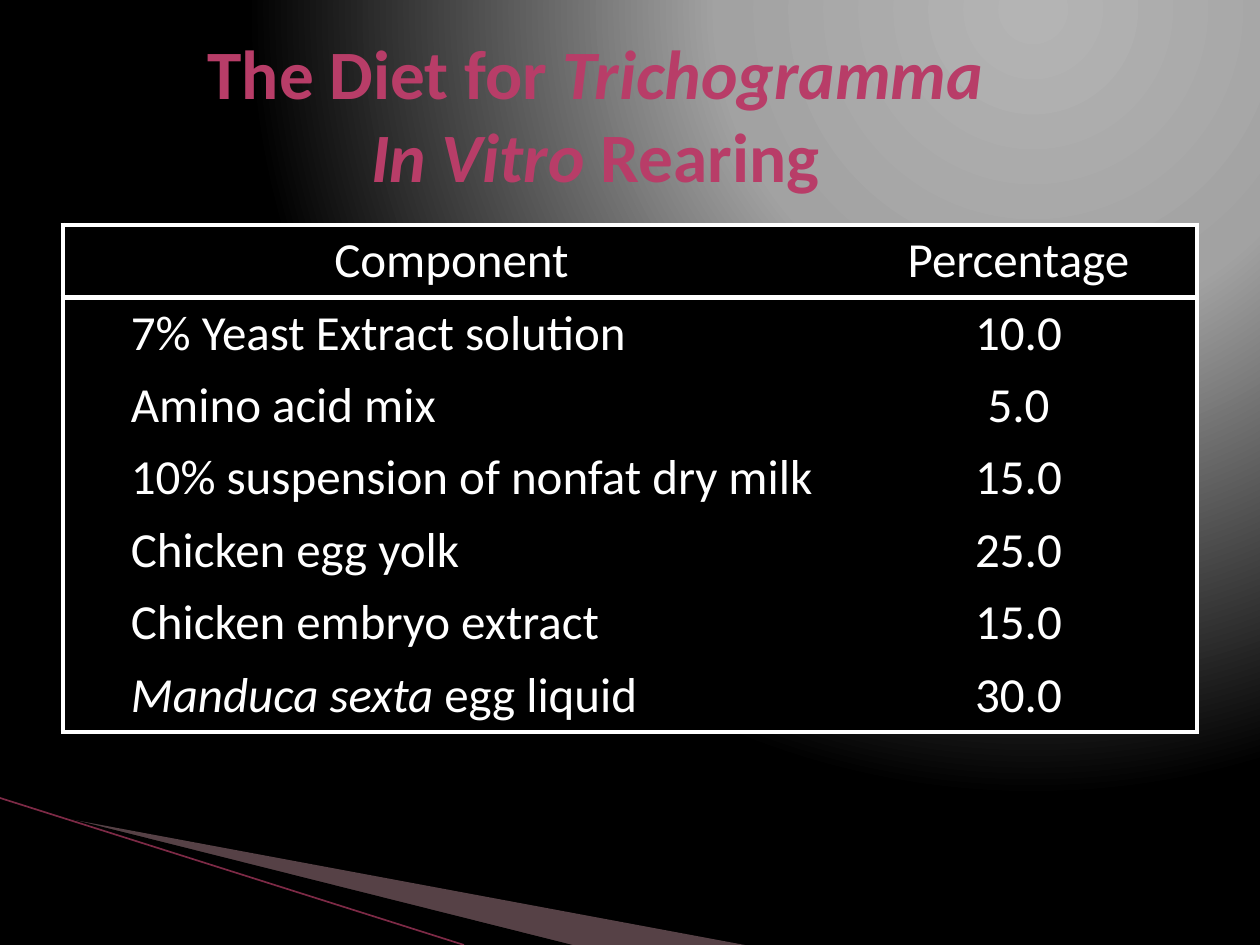
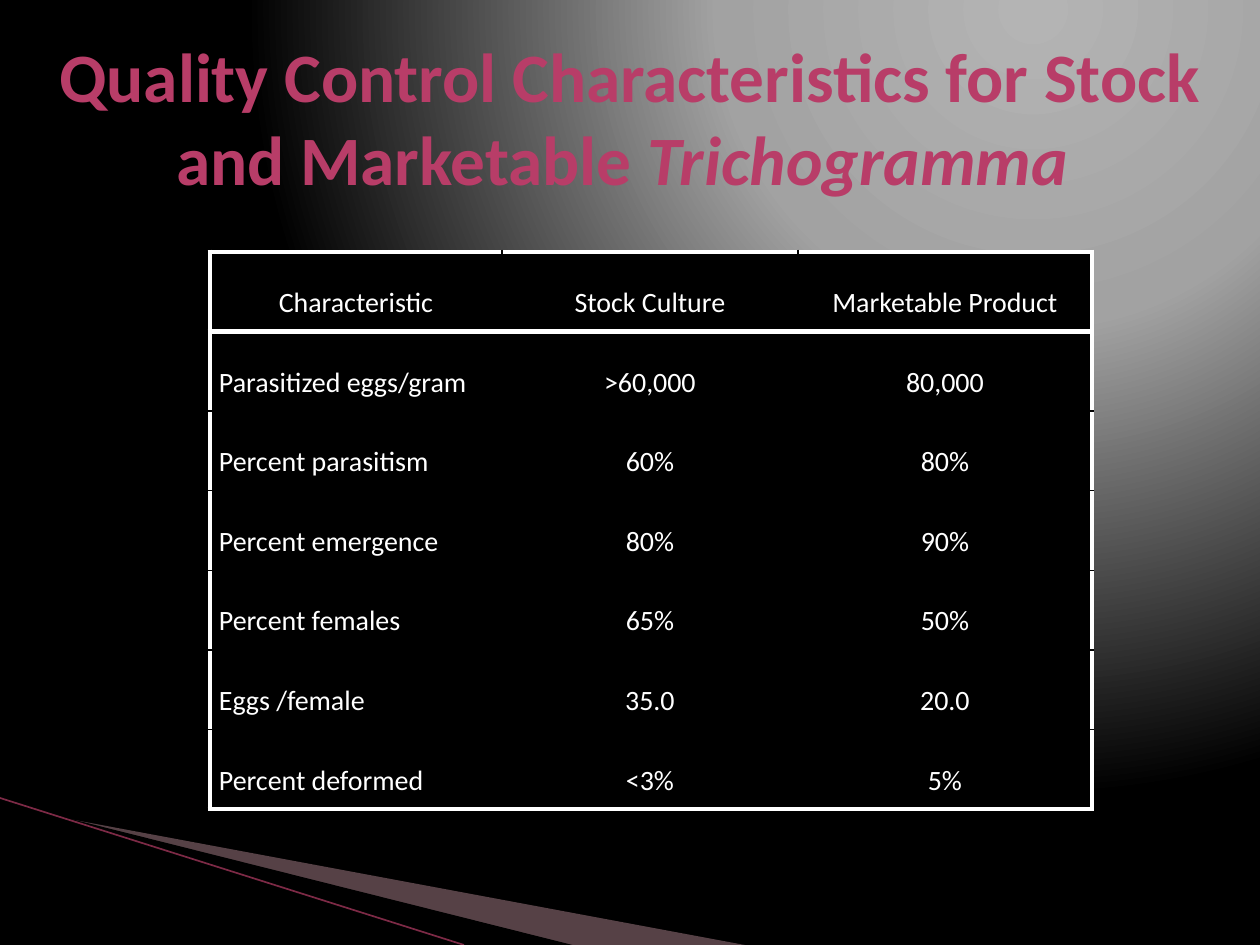
"""Build two slides on Trichogramma rearing: the diet and the quality control tables."""
from pptx import Presentation
from pptx.dml.color import RGBColor
from pptx.enum.shapes import MSO_CONNECTOR as Conn
from pptx.enum.text import MSO_ANCHOR as Anchor, PP_ALIGN as Align
from pptx.oxml import parse_xml
from pptx.oxml.ns import nsdecls, qn
from pptx.util import Pt

PX = 914400 // 126
W, H = 1260, 945
FONT = "Calibri"
WHITE = RGBColor(0xFF, 0xFF, 0xFF)
BLACK = RGBColor(0, 0, 0)
ROSE = RGBColor(0xB8, 0x3D, 0x68)
PALE_ROSE = RGBColor(0xD8, 0xA3, 0xAF)
DARK_ROSE = RGBColor(0x7D, 0x2A, 0x46)
GLOW = [(0, RGBColor(0xB4, 0xB4, 0xB4)), (40, RGBColor(0xA2, 0xA2, 0xA2)), (100, BLACK)]
WEDGES = [
    (PALE_ROSE, 40, [(69, 819), (750, 946), (575, 946)]),
    (BLACK, 100, [(67, 818), (576, 946), (469, 947), (68, 819)]),
]
RAY = (0, 798, 464, 945)
FRAME_PT = 3

SLIDES = [
    {
        "title": ["The Diet for *Trichogramma*", "*In Vitro* Rearing"],
        "title_box": (139, 30, 913, 157),
        "rows": [
            ("Component", "Percentage"),
            ("7% Yeast Extract solution", "10.0"),
            ("Amino acid mix", "5.0"),
            ("10% suspension of nonfat dry milk", "15.0"),
            ("Chicken egg yolk", "25.0"),
            ("Chicken embryo extract", "15.0"),
            ("*Manduca sexta* egg liquid", "30.0"),
        ],
        "at": (63, 225), "height": 507, "cols": (777, 357),
        "size": 28, "margins": (13, 6, 13, 6), "label_left": 68, "inner_pt": 0,
    },
    {
        "title": ["Quality Control Characteristics for Stock and Marketable *Trichogramma *"],
        "title_box": (21, 33, 1218, 157),
        "rows": [
            ("Characteristic", "Stock Culture", "Marketable Product"),
            ("Parasitized eggs/gram", ">60,000", "80,000"),
            ("Percent parasitism", "60%", "80%"),
            ("Percent emergence", "80%", "90%"),
            ("Percent females", "65%", "50%"),
            ("Eggs /female", "35.0", "20.0"),
            ("Percent deformed", "<3%", "5%"),
        ],
        "at": (210, 252), "height": 557, "cols": (292, 296, 294),
        "size": 16, "margins": (9, 34, 9, 0), "label_left": 9, "inner_pt": 1,
    },
]


def px(*values):
    return [v * PX for v in values]


def apply(obj, **values):
    for name, value in values.items():
        setattr(obj, name, value)


def write(p, text, align, color, **font):
    p.alignment = align
    for i, part in enumerate(text.split("*")):
        if part:
            r = p.add_run()
            r.text = part
            apply(r.font, name=FONT, italic=i % 2 == 1, **font)
            r.font.color.rgb = color


def add_background(s):
    s.background.fill.gradient()
    grad = s._element.find(".//" + qn("a:gradFill"))
    stops = "".join(f'<a:gs pos="{pos * 1000}"><a:srgbClr val="{c}"/></a:gs>' for pos, c in GLOW)
    grad.getparent().replace(grad, parse_xml(
        f'<a:gradFill rotWithShape="1" {nsdecls("a")}><a:gsLst>{stops}</a:gsLst><a:path path="circle">'
        '<a:fillToRect l="65000" t="0" r="0" b="98000"/></a:path></a:gradFill>'))


def add_rays(s):
    for color, opacity, points in WEDGES:
        builder = s.shapes.build_freeform(*points[0], scale=PX)
        builder.add_line_segments(points[1:], close=True)
        sp = builder.convert_to_shape()
        sp.shadow.inherit = False
        sp.line.fill.background()
        sp.fill.solid()
        sp.fill.fore_color.rgb = color
        if opacity < 100:
            clr = sp._element.spPr.find(".//" + qn("a:srgbClr"))
            clr.append(parse_xml(f'<a:alpha val="{opacity * 1000}" {nsdecls("a")}/>'))
    ray = s.shapes.add_connector(Conn.STRAIGHT, *px(*RAY))
    ray.line.color.rgb = DARK_ROSE
    ray.line.width = Pt(0.95)
    ray._element.spPr.append(parse_xml(f'<a:effectLst {nsdecls("a")}/>'))


def add_title(s, lines, box):
    tf = s.shapes.add_textbox(*px(*box)).text_frame
    apply(tf, word_wrap=True, vertical_anchor=Anchor.TOP,
          margin_left=0, margin_top=0, margin_right=0, margin_bottom=0)
    for i, line in enumerate(lines):
        p = tf.add_paragraph() if i else tf.paragraphs[0]
        write(p, line, Align.CENTER, ROSE, size=Pt(39.6), bold=True)


def set_borders(cell, framed, inner_pt):
    tcPr = cell._tc.get_or_add_tcPr()
    for i, side in enumerate("LRTB"):
        color, width = (WHITE, FRAME_PT) if side in framed else (BLACK, inner_pt)
        fill = f'<a:solidFill><a:srgbClr val="{color}"/></a:solidFill>' if width else "<a:noFill/>"
        tcPr.insert(i, parse_xml(f'<a:ln{side} w="{Pt(width)}" {nsdecls("a")}>{fill}</a:ln{side}>'))


def add_data_table(s, d):
    rows, cols = d["rows"], d["cols"]
    size = (sum(cols), d["height"])
    table = s.shapes.add_table(len(rows), len(cols), *px(*d["at"], *size)).table
    apply(table, first_row=False, horz_banding=False)
    for col, width in zip(table.columns, cols):
        col.width = width * PX
    for row in table.rows:
        row.height = d["height"] * PX // len(rows)
    left, top, right, bottom = px(*d["margins"])
    for i, texts in enumerate(rows):
        for j, text in enumerate(texts):
            cell = table.cell(i, j)
            label = i > 0 and j == 0
            apply(cell, margin_left=d["label_left"] * PX if label else left, margin_top=top,
                  margin_right=right, margin_bottom=bottom, vertical_anchor=Anchor.TOP)
            cell.fill.solid()
            cell.fill.fore_color.rgb = BLACK
            sides = {"L": j == 0, "R": j == len(cols) - 1,
                     "T": i < 2, "B": i in (0, len(rows) - 1)}
            set_borders(cell, [k for k, on in sides.items() if on], d["inner_pt"])
            write(cell.text_frame.paragraphs[0], text,
                  Align.LEFT if label else Align.CENTER, WHITE, size=Pt(d["size"]))


def main():
    prs = Presentation()
    prs.slide_width, prs.slide_height = px(W, H)
    for d in SLIDES:
        s = prs.slides.add_slide(prs.slide_layouts[6])
        add_background(s)
        add_rays(s)
        add_data_table(s, d)
        add_title(s, d["title"], d["title_box"])
    prs.save("out.pptx")


if __name__ == "__main__":
    main()
